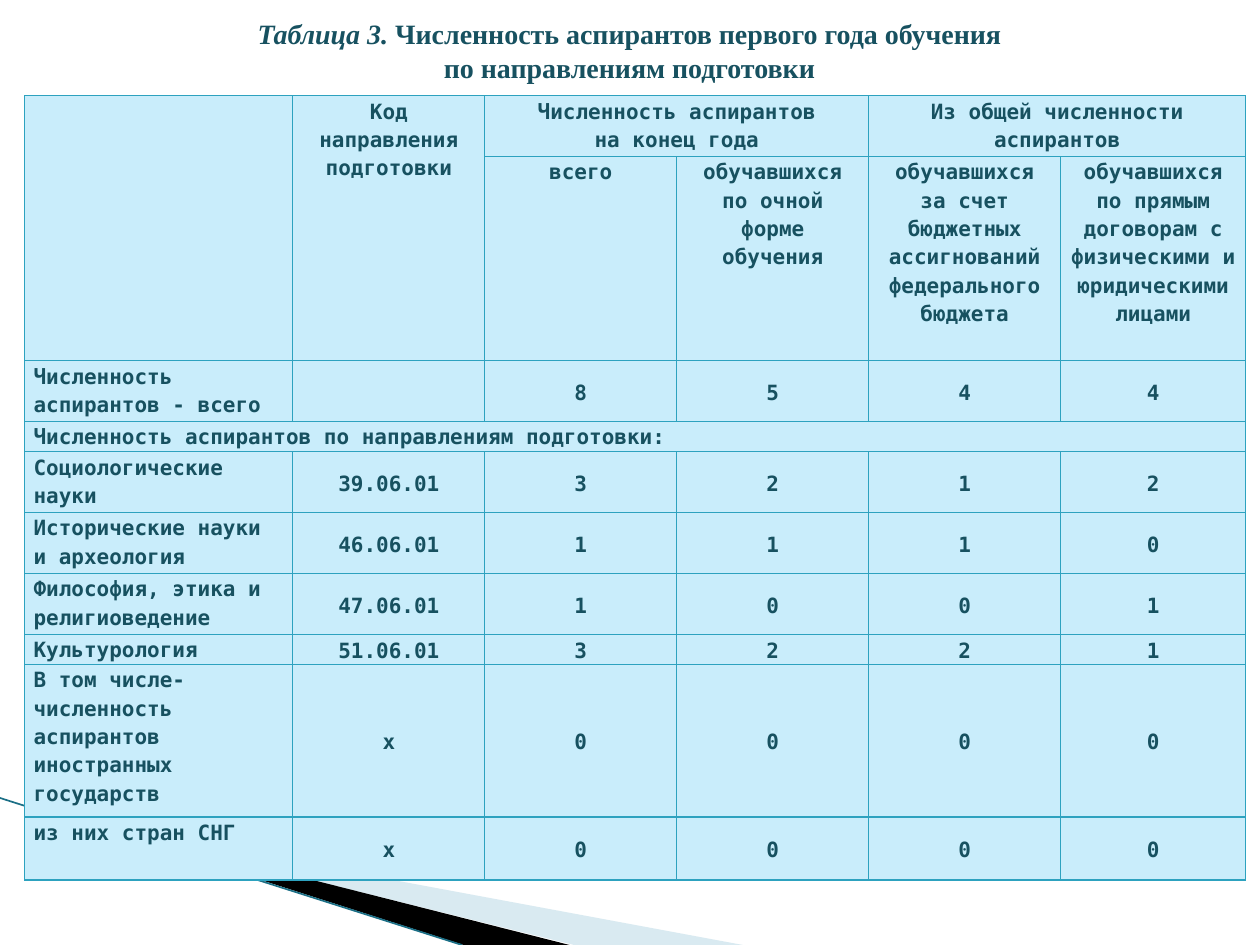
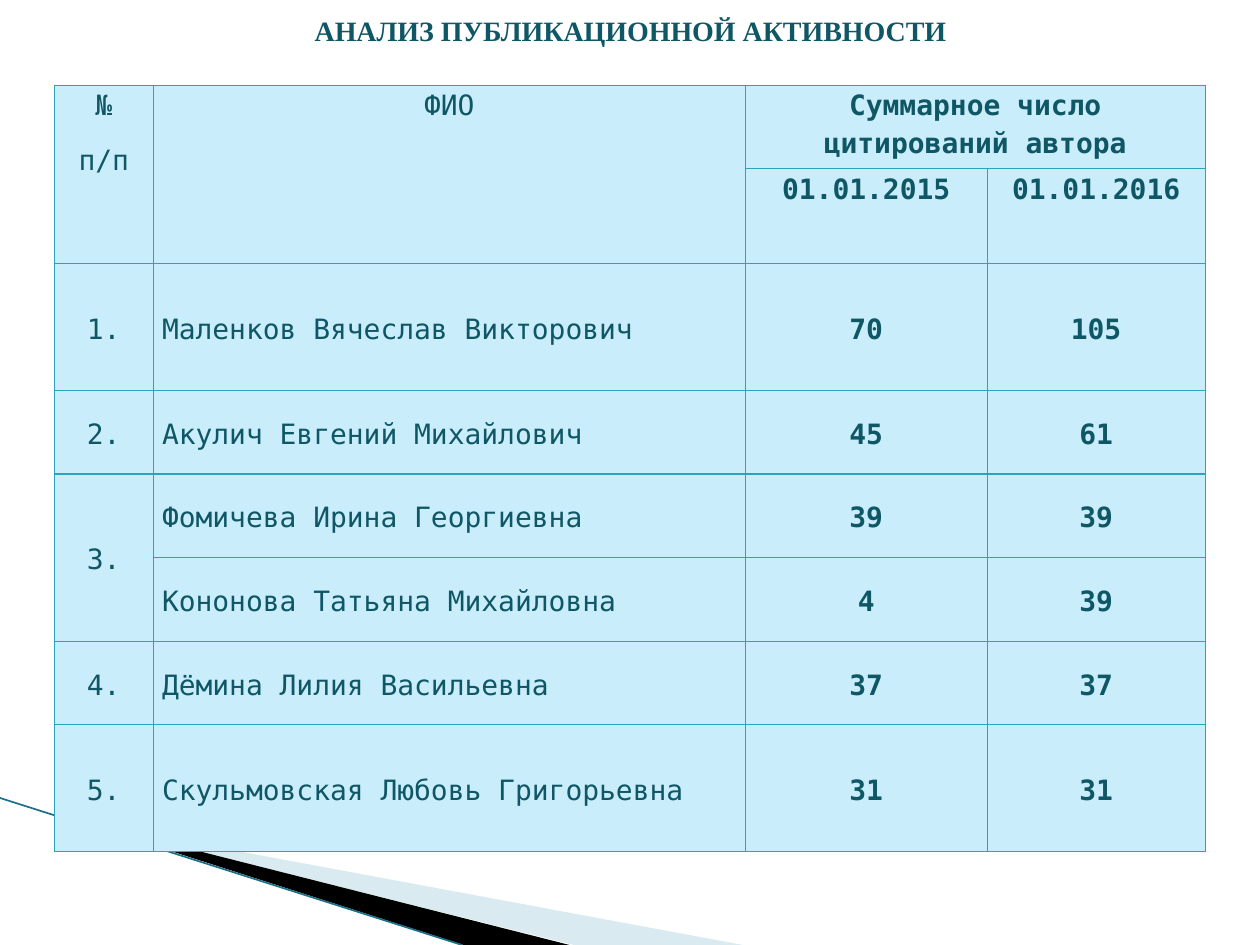
import lxml.etree
import pptx
import pptx.dml.color
import pptx.enum.shapes
import pptx.enum.text
import pptx.oxml
import pptx.oxml.ns
import pptx.util

Pt = pptx.util.Pt
RGBColor = pptx.dml.color.RGBColor
Align = pptx.enum.text.PP_ALIGN
Anchor = pptx.enum.text.MSO_ANCHOR
qn = pptx.oxml.ns.qn

TITLE_INK = RGBColor(0x17, 0x51, 0x60)
DEEP_INK = RGBColor(0x10, 0x57, 0x66)
CELL_BLUE = RGBColor(0xC9, 0xED, 0xFB)
BORDER = RGBColor(0x2D, 0xA2, 0xBF)
PALE_RAY = RGBColor(0xA0, 0xCB, 0xDC)
BLACK = RGBColor(0, 0, 0)
RAY_LINE = RGBColor(0x1B, 0x6F, 0x86)
TITLE_FONT = "Times New Roman"
TABLE_FONT = "DejaVu Sans Mono"

POSTGRADUATES = [
    ["", "Код направления подготовки", "Численность аспирантов\nна конец года", "",
     "Из общей численности аспирантов", ""],
    ["", "", "всего", "обучавшихся\nпо очной форме обучения",
     "обучавшихся за счет бюджетных ассигнований федерального бюджета",
     "обучавшихся по прямым договорам с физическими и юридическими лицами"],
    ["Численность аспирантов - всего", "", "8", "5", "4", "4"],
    ["Численность аспирантов по направлениям подготовки:", "", "", "", "", ""],
    ["Социологические науки", "39.06.01", "3", "2", "1", "2"],
    ["Исторические науки и археология", "46.06.01", "1", "1", "1", "0"],
    ["Философия, этика и религиоведение", "47.06.01", "1", "0", "0", "1"],
    ["Культурология", "51.06.01", "3", "2", "2", "1"],
    ["В том числе- численность аспирантов иностранных государств", "х", "0", "0", "0", "0"],
    ["из них стран СНГ", "х", "0", "0", "0", "0"],
]
CITATIONS = [
    ["№\nп/п", "ФИО", "Суммарное число цитирований автора", ""],
    ["", "", "01.01.2015", "01.01.2016"],
    ["1.", "Маленков Вячеслав Викторович", "70", "105"],
    ["2.", "Акулич Евгений Михайлович", "45", "61"],
    ["3.", "Фомичева Ирина Георгиевна", "39", "39"],
    ["", "Кононова Татьяна Михайловна", "4", "39"],
    ["4.", "Дёмина Лилия Васильевна", "37", "37"],
    ["5.", "Скульмовская Любовь Григорьевна", "31", "31"],
]


class Report:
    """Hold the deck style and the current page, and draw elements on it."""

    def __init__(self):
        self.deck = pptx.Presentation()
        self.deck.slide_width, self.deck.slide_height = Pt(720), Pt(540)
        self.page = None
        self.ink = TITLE_INK

    def new_page(self, ink):
        self.page = self.deck.slides.add_slide(self.deck.slide_layouts[6])
        self.ink = ink
        self.ray([(39.6, 468.5), (424.5, 540), (328, 540)], PALE_RAY, 40)
        self.ray([(38.2, 467.3), (325.5, 540), (265, 540)], BLACK)
        self.line((0, 456), (264, 540))

    def ray(self, points, color, opacity=100):
        start, *others = [(Pt(x), Pt(y)) for x, y in points]
        builder = self.page.shapes.build_freeform(*start)
        builder.add_line_segments(others)
        shape = builder.convert_to_shape()
        shape.shadow.inherit = False
        shape.line.fill.background()
        shape.fill.solid()
        shape.fill.fore_color.rgb = color
        if opacity < 100:
            tone = shape.fill._xPr.find(".//" + qn("a:srgbClr"))
            lxml.etree.SubElement(tone, qn("a:alpha"), val=str(opacity * 1000))

    def line(self, start, end):
        connector = self.page.shapes.add_connector(
            pptx.enum.shapes.MSO_CONNECTOR.STRAIGHT, *map(Pt, start + end))
        connector.line.color.rgb = RAY_LINE
        connector.line.width = Pt(0.95)
        lxml.etree.SubElement(connector._element.spPr, qn("a:effectLst"))

    def style(self, font, name, size, bold):
        font.name, font.size, font.bold = name, Pt(size), bold
        font.color.rgb = self.ink

    def title(self, frame, text, lead="", wrap=True):
        box = self.page.shapes.add_textbox(*map(Pt, frame))
        box.text_frame.word_wrap = wrap
        box.text_frame.vertical_anchor = Anchor.MIDDLE
        para = box.text_frame.paragraphs[0]
        para.alignment = Align.CENTER
        if lead:
            span = para.add_run()
            span.text = lead
            span.font.italic = True
        for index, part in enumerate(text.split("\n")):
            if index:
                para.add_line_break()
            para.add_run().text = part
        self.style(para.font, TITLE_FONT, 16, True)

    def border(self, cell):
        properties = cell._tc.get_or_add_tcPr()
        for index, side in enumerate("LRTB"):
            edge = pptx.oxml.parse_xml(
                f'<a:ln{side} xmlns:a="http://schemas.openxmlformats.org/drawingml/2006/main" '
                f'w="{Pt(0.75)}"><a:solidFill><a:srgbClr val="{BORDER}"/></a:solidFill></a:ln{side}>')
            properties.insert(index, edge)

    def cell(self, cell, text, size, bold, align, anchor, after):
        cell.fill.solid()
        cell.fill.fore_color.rgb = CELL_BLUE
        self.border(cell)
        cell.margin_left = cell.margin_right = Pt(5)
        cell.margin_top = cell.margin_bottom = 0
        cell.vertical_anchor = anchor
        cell.text = text
        for para in cell.text_frame.paragraphs:
            para.alignment = align
            para.line_spacing = 1.15
            para.space_after = Pt(after)
            self.style(para.font, TABLE_FONT, size, bold)

    def table(self, corner, widths, heights, rows, merges, size, label_column,
              label_anchor, bold_from=0, after=0):
        frame = self.page.shapes.add_table(
            len(heights), len(widths), *map(Pt, corner), Pt(sum(widths)), Pt(sum(heights)))
        grid = frame.table
        grid.first_row = grid.horz_banding = False
        for column, width in zip(grid.columns, widths):
            column.width = Pt(width)
        for row, height in zip(grid.rows, heights):
            row.height = Pt(height)
        for first, last in merges:
            grid.cell(*first).merge(grid.cell(*last))
        for r, texts in enumerate(rows):
            for c, text in enumerate(texts):
                header, label = r < 2, c == label_column
                align = Align.LEFT if label and not header else Align.CENTER
                anchor = Anchor.TOP if header else label_anchor if label else Anchor.MIDDLE
                self.cell(grid.cell(r, c), text, size, c >= bold_from, align, anchor, after)


def main():
    report = Report()

    report.new_page(TITLE_INK)
    report.title((25.2, 6, 669, 45.4),
                 " Численность аспирантов первого года обучения\nпо направлениям подготовки",
                 lead="Таблица 3.")
    two_lines, one_line = 34.8, 17.3
    report.table(
        (14.2, 54.8), [153.2] + [109.7] * 4 + [105.8],
        [two_lines, 116.6, two_lines, one_line] + [two_lines] * 3 + [one_line, 87, 36],
        POSTGRADUATES,
        [((0, 0), (1, 0)), ((0, 1), (1, 1)), ((0, 2), (0, 3)), ((0, 4), (0, 5)),
         ((3, 0), (3, 5))],
        size=12, label_column=0, label_anchor=Anchor.TOP)

    report.new_page(DEEP_INK)
    report.title((170, 4.3, 380.8, 26.6), "АНАЛИЗ ПУБЛИКАЦИОННОЙ АКТИВНОСТИ", wrap=False)
    report.table(
        (31, 48.7), [56.6, 338.3, 138.2, 124.6], [47.8, 54, 72.4] + [47.8] * 4 + [72.4],
        CITATIONS,
        [((0, 0), (1, 0)), ((0, 1), (1, 1)), ((0, 2), (0, 3)), ((4, 0), (5, 0))],
        size=16, label_column=1, label_anchor=Anchor.MIDDLE, bold_from=2, after=10)

    report.deck.save("out.pptx")


if __name__ == "__main__":
    main()
